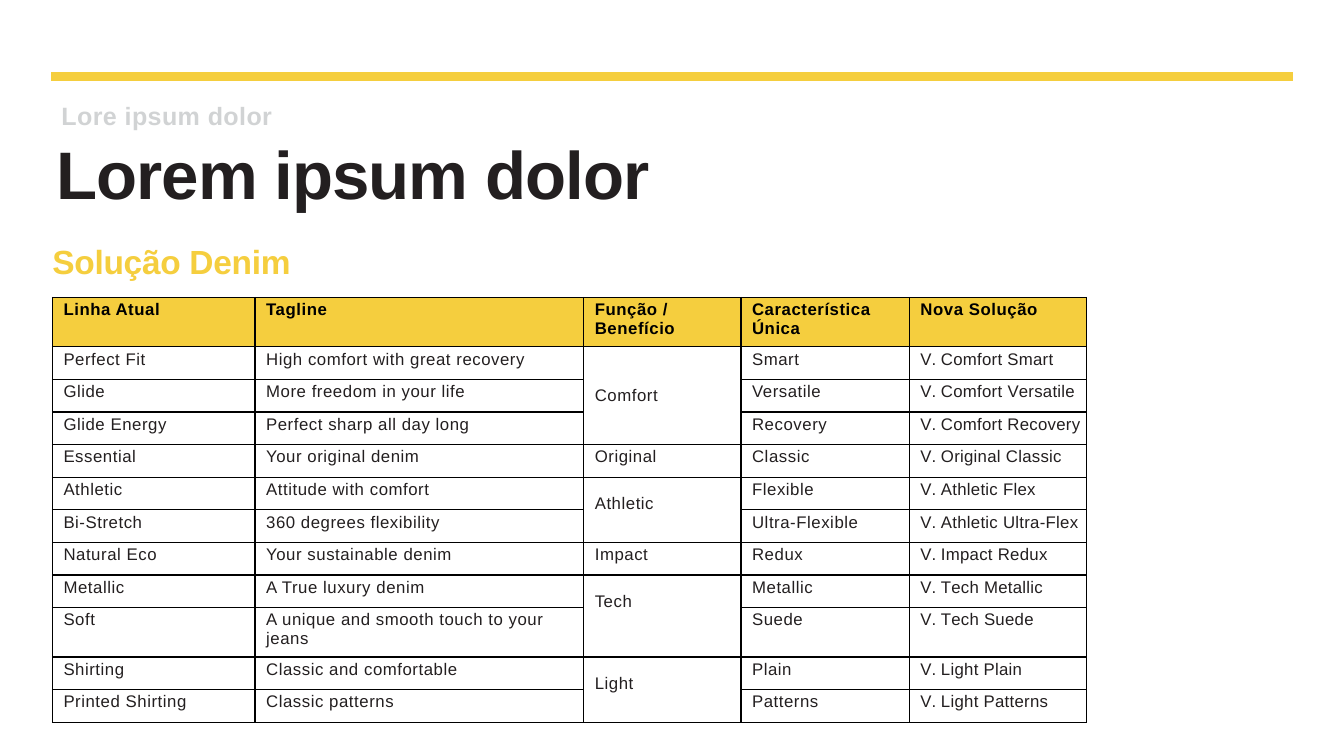
from dataclasses import dataclass

from lxml import etree
from pptx import Presentation
from pptx.dml.color import RGBColor
from pptx.enum.shapes import MSO_CONNECTOR
from pptx.enum.text import MSO_ANCHOR
from pptx.oxml.ns import qn
from pptx.util import Inches, Pt

STRAIGHT = MSO_CONNECTOR.STRAIGHT
TOP, MIDDLE = MSO_ANCHOR.TOP, MSO_ANCHOR.MIDDLE


@dataclass(frozen=True)
class Theme:
    font: str = "Arial"
    yellow: str = "F5CE3E"
    ink: str = "231F20"
    black: str = "000000"
    grey: str = "D1D3D4"
    kicker: float = 17.9
    title: float = 48
    subtitle: float = 23.9
    cell: float = 12


THEME = Theme()

# text, (left, top, width, height), size, colour, letter spacing, anchor
HEADINGS = [
    ("Lore ipsum dolor", (0.6, 0.99, 3.13, 0.31), THEME.kicker, THEME.grey, 0.3, TOP),
    ("Solução Denim", (0.51, 2.38, 2.71, 0.41), THEME.subtitle, THEME.yellow, -0.2, TOP),
    ("Lorem ipsum dolor", (0.55, 1.3, 6.11, 0.82), THEME.title, THEME.ink, -0.7, MIDDLE),
]

HEADER = ["Linha Atual", "Tagline", "Função / Benefício", "Característica Única", "Nova Solução"]

# benefit, then its lines: current line, tagline, feature, name in the new solution
GROUPS = [
    ("Comfort", [
        ("Perfect Fit", "High comfort with great recovery", "Smart", "Smart"),
        ("Glide", "More freedom in your life", "Versatile", "Versatile"),
        ("Glide Energy", "Perfect sharp all day long", "Recovery", "Recovery"),
    ]),
    ("Original", [("Essential", "Your original denim", "Classic", "Classic")]),
    ("Athletic", [
        ("Athletic", "Attitude with comfort", "Flexible", "Flex"),
        ("Bi-Stretch", "360 degrees flexibility", "Ultra-Flexible", "Ultra-Flex"),
    ]),
    ("Impact", [("Natural Eco", "Your sustainable denim", "Redux", "Redux")]),
    ("Tech", [
        ("Metallic", "A True luxury denim", "Metallic", "Metallic"),
        ("Soft", "A unique and smooth touch to your jeans", "Suede", "Suede"),
    ]),
    ("Light", [
        ("Shirting", "Classic and comfortable", "Plain", "Plain"),
        ("Printed Shirting", "Classic patterns", "Patterns", "Patterns"),
    ]),
]

TABLE_LEFT, TABLE_TOP = 0.52, 2.95
COLUMN_WIDTHS = [2.01, 3.26, 1.56, 1.67, 1.76]
TABLE_HEIGHT, TALL_ROW = 4.22, 0.49
TALL_ROWS = (0, 9)
BENEFIT_COLUMN = 2
BENEFIT_TOP = {1: 0.03, 2: 0.17, 3: 0.39}  # top inset by number of merged rows
CELL_SPACING, NAME_SPACING = 0.4, 0.2
OPENING_SPACING = {"Tech": -0.8, "Versatile": -0.4}  # first letter drawn tighter


def add_run(para, text, size, color, spacing, bold=False):
    span = para.add_run()
    span.text = text
    span.font.name = THEME.font
    span.font.size = Pt(size)
    span.font.bold = bold
    span.font.color.rgb = RGBColor.from_string(color)
    span._r.get_or_add_rPr().set("spc", str(round(spacing * 100)))


def add_heading(page, text, place, size, color, spacing, anchor):
    box = page.shapes.add_textbox(*map(Inches, place))
    frame = box.text_frame
    frame.word_wrap = True
    frame.vertical_anchor = anchor
    frame.margin_left = frame.margin_top = Inches(0.01)
    frame.margin_right = frame.margin_bottom = 0
    add_run(frame.paragraphs[0], text, size, color, spacing, bold=True)


def add_rule(page):
    rule = page.shapes.add_connector(
        STRAIGHT, Inches(0.51), Inches(0.76), Inches(12.82), Inches(0.76))
    rule.line.color.rgb = RGBColor.from_string(THEME.yellow)
    rule.line.width = Pt(6)
    etree.SubElement(rule._element.spPr, qn("a:effectLst"))


def style_cell(cell, fill=None):
    cell.margin_left, cell.margin_top = Inches(0.11), Inches(0.03)
    cell.margin_right = cell.margin_bottom = 0
    cell.vertical_anchor = TOP
    properties = cell._tc.get_or_add_tcPr()
    for side in ("lnL", "lnR", "lnT", "lnB"):
        border = etree.SubElement(properties, qn(f"a:{side}"), w=str(Pt(1)))
        paint = etree.SubElement(border, qn("a:solidFill"))
        etree.SubElement(paint, qn("a:srgbClr"), val=THEME.black)
    if fill:
        cell.fill.solid()
        cell.fill.fore_color.rgb = RGBColor.from_string(fill)
    else:
        cell.fill.background()


def write_cell(cell, pieces, color=THEME.ink, bold=False):
    """Fill a cell with (text, letter spacing) pieces, one run each."""
    para = cell.text_frame.paragraphs[0]
    for text, spacing in pieces:
        add_run(para, text, THEME.cell, color, spacing, bold)


def solution_pieces(benefit, name):
    pieces = [("V", -0.9), (". ", 0)]
    for word, gap in ((benefit, " "), (name, "")):
        if word in OPENING_SPACING:
            pieces.append((word[0], OPENING_SPACING[word]))
            word = word[1:]
        pieces.append((word + gap, NAME_SPACING))
    return pieces


def add_solution_table(page):
    row_count = 1 + sum(len(lines) for _, lines in GROUPS)
    table = page.shapes.add_table(
        row_count, len(COLUMN_WIDTHS), Inches(TABLE_LEFT), Inches(TABLE_TOP),
        Inches(sum(COLUMN_WIDTHS)), Inches(TABLE_HEIGHT)).table
    table.horz_banding = False
    for column, width in zip(table.columns, COLUMN_WIDTHS):
        column.width = Inches(width)
    plain_row = (TABLE_HEIGHT - TALL_ROW * len(TALL_ROWS)) / (row_count - len(TALL_ROWS))
    for index, row in enumerate(table.rows):
        row.height = Inches(TALL_ROW if index in TALL_ROWS else plain_row)
        for cell in row.cells:
            style_cell(cell, THEME.yellow if index == 0 else None)

    for column, label in enumerate(HEADER):
        write_cell(table.cell(0, column), [(label, CELL_SPACING)], THEME.black, bold=True)

    first = 1
    for benefit, lines in GROUPS:
        benefit_cell = table.cell(first, BENEFIT_COLUMN)
        if len(lines) > 1:
            benefit_cell.merge(table.cell(first + len(lines) - 1, BENEFIT_COLUMN))
        benefit_cell.margin_top = Inches(BENEFIT_TOP[len(lines)])
        write_cell(benefit_cell, [(benefit, CELL_SPACING)])
        for row, (current, tagline, feature, name) in enumerate(lines, first):
            for column, text in ((0, current), (1, tagline), (3, feature)):
                write_cell(table.cell(row, column), [(text, CELL_SPACING)])
            write_cell(table.cell(row, 4), solution_pieces(benefit, name))
        first += len(lines)


def main():
    deck = Presentation()
    deck.slide_width, deck.slide_height = Inches(13.33), Inches(7.5)
    page = deck.slides.add_slide(deck.slide_layouts[6])
    add_rule(page)
    add_solution_table(page)
    for heading in HEADINGS:
        add_heading(page, *heading)
    deck.save("out.pptx")


if __name__ == "__main__":
    main()
